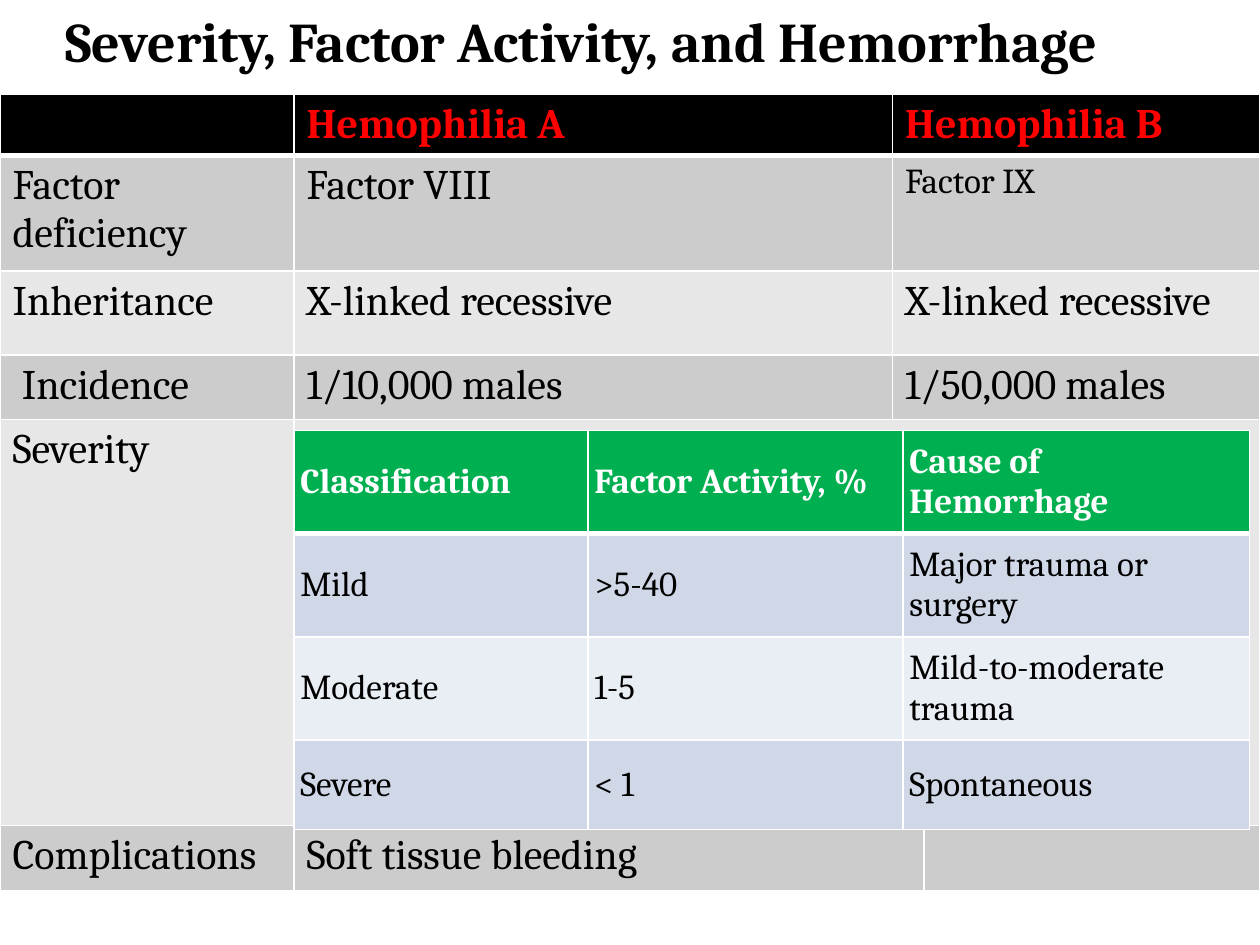
"""Build a slide that compares hemophilia A and B in two nested tables."""
from lxml.etree import SubElement
from pptx import Presentation
from pptx.dml.color import RGBColor
from pptx.enum.text import MSO_ANCHOR, PP_ALIGN
from pptx.oxml.ns import qn
from pptx.util import Pt

TITLE = "Severity, Factor Activity, and Hemorrhage"
TYPES = {
    "at": (0, 54),
    "cols": (168, 342, 18, 192),
    "rows": (34, 66, 48, 37, 232, 37),
    "text": [
        ("", "Hemophilia A", "Hemophilia B", ""),
        ("Factor deficiency", "Factor VIII", "Factor IX", ""),
        ("Inheritance", "X-linked recessive", "X-linked recessive", ""),
        (" Incidence", "1/10,000 males", "1/50,000 males", ""),
        ("Severity", "", "", ""),
        ("Complications", "Soft tissue bleeding", "", ""),
    ],
    "spans": [(0, 2, 3), (1, 2, 3), (2, 2, 3), (3, 2, 3), (4, 1, 3), (5, 1, 2)],
    "head": ("000000", "FF0000"),
    "bands": ("CCCCCC", "E7E7E7"),
    "size": 24,
    "small": ["Factor IX"],
    "cell": {},
}
GRADES = {
    "at": (168, 246),
    "cols": (168, 180, 198),
    "rows": (59, 59, 59, 51),
    "text": [
        ("Classification", "Factor Activity, %", "Cause of Hemorrhage"),
        ("Mild", ">5-40", "Major trauma or surgery"),
        ("Moderate", "1-5", "Mild-to-moderate trauma"),
        ("Severe", "< 1", "Spontaneous"),
    ],
    "spans": [],
    "head": ("00B050", "FFFFFF"),
    "bands": ("D0D8E8", "E9EDF4"),
    "size": 20,
    "small": [],
    "cell": {
        "vertical_anchor": MSO_ANCHOR.MIDDLE,
        "margin_left": Pt(3.6), "margin_right": Pt(3.6),
        "margin_top": Pt(2.9), "margin_bottom": Pt(2.9),
    },
}


def assign(item, values):
    for name, value in values.items():
        setattr(item, name, value)


def paint(color, code):
    color.rgb = RGBColor.from_string(code)


def write(para, text, size, code, bold):
    run = para.add_run()
    run.text = text
    assign(run.font, {"name": "Cambria", "size": Pt(size), "bold": bold})
    paint(run.font.color, code)


def edge(cell, row):
    props = cell._tc.get_or_add_tcPr()
    widths = {"L": 1, "R": 1, "T": 3 if row == 1 else 1, "B": 3 if row == 0 else 1}
    for spot, (side, width) in enumerate(widths.items()):
        line = SubElement(props, qn("a:ln" + side), w=str(Pt(width)))
        fill = SubElement(line, qn("a:solidFill"))
        SubElement(fill, qn("a:srgbClr"), val="FFFFFF")
        props.insert(spot, line)


def draw(slide, data):
    cols, rows = data["cols"], data["rows"]
    box = [Pt(n) for n in (*data["at"], sum(cols), sum(rows))]
    table = slide.shapes.add_table(len(rows), len(cols), *box).table
    assign(table, {"first_row": False, "horz_banding": False})
    for col, width in zip(table.columns, cols):
        col.width = Pt(width)
    for row, height in zip(table.rows, rows):
        row.height = Pt(height)
    for r, line in enumerate(data["text"]):
        band = data["bands"][(r - 1) % 2]
        back, ink = (band, "000000") if r else data["head"]
        for c, text in enumerate(line):
            cell = table.cell(r, c)
            assign(cell, data["cell"])
            cell.fill.solid()
            paint(cell.fill.fore_color, back)
            edge(cell, r)
            if text:
                size = 20 if text in data["small"] else data["size"]
                write(cell.text_frame.paragraphs[0], text, size, ink, r == 0)
    for r, first, last in data["spans"]:
        table.cell(r, first).merge(table.cell(r, last))


def main():
    deck = Presentation()
    assign(deck, {"slide_width": Pt(720), "slide_height": Pt(540)})
    slide = deck.slides.add_slide(deck.slide_layouts[5])
    title = slide.shapes.title
    assign(title, {"left": Pt(30), "top": Pt(0), "width": Pt(648), "height": Pt(46)})
    assign(title.text_frame, {"vertical_anchor": MSO_ANCHOR.TOP, "word_wrap": True})
    para = title.text_frame.paragraphs[0]
    para.alignment = PP_ALIGN.LEFT
    write(para, TITLE, 32, "000000", True)
    for data in (TYPES, GRADES):
        draw(slide, data)
    deck.save("out.pptx")


if __name__ == "__main__":
    main()
